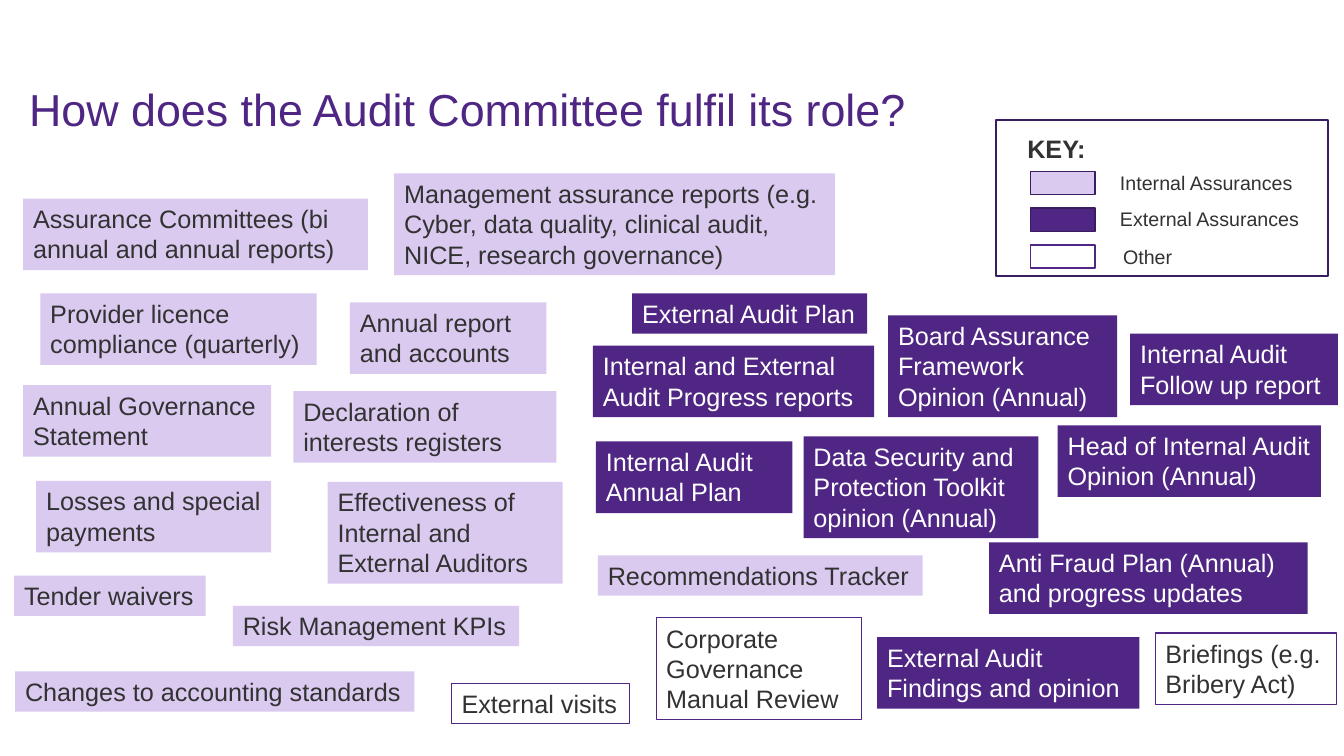
"""Build the slide on how the Audit Committee fulfils its role."""
from dataclasses import dataclass

from pptx import Presentation
from pptx.dml.color import RGBColor as Rgb
from pptx.enum.shapes import MSO_SHAPE as Form
from pptx.enum.text import MSO_ANCHOR as Anchor, MSO_AUTO_SIZE as Fit, PP_ALIGN as Align
from pptx.util import Inches, Pt


@dataclass(frozen=True)
class Theme:
    font: str = "Arial"
    plum: str = "4F2683"
    lilac: str = "DBCAF0"
    edge: str = "3A1C61"
    ink: str = "323232"
    white: str = "FFFFFF"
    title: int = 32
    body: int = 18
    small: int = 14


THEME = Theme()

STYLES = {
    "inner": dict(fill=THEME.lilac, ink=THEME.ink),
    "outer": dict(fill=THEME.plum, ink=THEME.white),
    "other": dict(fill=THEME.white, ink=THEME.ink, line=THEME.plum),
}

BOXES = {
    "inner": [
        (0.23, 1.97, 3.42, 2, "Assurance Committees (bi annual and annual reports)"),
        (3.91, 1.72, 4.37, 3, "Management assurance reports (e.g. Cyber, data quality, "
                              "clinical audit, NICE, research governance)"),
        (0.4, 2.91, 2.74, 2, "Provider licence compliance (quarterly)"),
        (3.47, 3, 1.95, 2, "Annual report and accounts"),
        (0.23, 3.82, 2.46, 2, "Annual Governance Statement"),
        (2.91, 3.88, 2.61, 2, "Declaration of interests registers"),
        (0.36, 4.77, 2.33, 2, "Losses and special payments"),
        (3.25, 4.78, 2.33, 3, "Effectiveness of Internal and External Auditors"),
        (5.93, 5.51, 3.22, 1, "Recommendations Tracker"),
        (0.14, 5.71, 1.9, 1, "Tender waivers"),
        (2.31, 6.01, 2.84, 1, "Risk Management KPIs"),
        (0.15, 6.66, 3.96, 1, "Changes to accounting standards"),
    ],
    "outer": [
        (6.27, 2.91, 2.33, 1, "External Audit Plan"),
        (5.88, 3.43, 2.79, 2, "Internal and External Audit Progress reports"),
        (8.81, 3.13, 2.27, 3, "Board Assurance Framework Opinion (Annual)"),
        (11.21, 3.31, 2.06, 2, "Internal Audit Follow up report"),
        (5.91, 4.38, 1.95, 2, "Internal Audit Annual Plan"),
        (7.97, 4.33, 2.33, 3, "Data Security and Protection Toolkit opinion (Annual)"),
        (10.49, 4.22, 2.61, 2, "Head of Internal Audit Opinion (Annual)"),
        (9.81, 5.38, 3.16, 2, "Anti Fraud Plan (Annual) and progress updates"),
        (8.7, 6.32, 2.6, 2, "External Audit Findings and opinion"),
    ],
    "other": [
        (4.48, 6.78, 1.76, 1, "External visits"),
        (6.51, 6.13, 2.04, 3, "Corporate Governance Manual Review"),
        (11.46, 6.28, 1.8, 2, "Briefings (e.g. Bribery Act)"),
    ],
}

KEYS = [
    (THEME.lilac, THEME.edge, 11.01, 1.65, "Internal Assurances"),
    (THEME.plum, THEME.edge, 11.01, 2, "External Assurances"),
    (THEME.white, THEME.plum, 11.04, 2.38, "Other"),
]


def write(shape, text, size=THEME.body, ink=THEME.ink, bold=False, wrap=True,
          fit=Fit.SHAPE_TO_FIT_TEXT, anchor=Anchor.TOP, space=1.0):
    """Put one formatted paragraph into a shape."""
    frame = shape.text_frame
    frame.word_wrap = wrap
    frame.auto_size = fit
    frame.vertical_anchor = anchor
    para = frame.paragraphs[0]
    para.alignment = Align.LEFT
    para.line_spacing = space
    run = para.add_run()
    run.text = text
    run.font.name = THEME.font
    run.font.size = Pt(size)
    run.font.bold = bold
    run.font.color.rgb = Rgb.from_string(ink)


class Board:
    """Hold the theme and the slide that is being drawn."""

    def __init__(self, slide, theme):
        """Keep the slide's shapes and the theme."""
        self.shapes = slide.shapes
        self.theme = theme

    def rect(self, at, fill=None, line=None, weight=1, shapes=None):
        """Draw a plain rectangle."""
        shape = (shapes or self.shapes).add_shape(Form.RECTANGLE, *map(Inches, at))
        shape.shadow.inherit = False
        if fill:
            shape.fill.solid()
            shape.fill.fore_color.rgb = Rgb.from_string(fill)
        else:
            shape.fill.background()
        if line:
            shape.line.color.rgb = Rgb.from_string(line)
            shape.line.width = Pt(weight)
        else:
            shape.line.fill.background()
        return shape

    def label(self, at, text, shapes=None, **form):
        """Draw a text box."""
        write((shapes or self.shapes).add_textbox(*map(Inches, at)), text, **form)

    def title(self, text):
        """Draw the slide title."""
        self.label((0.19, 0.75, 12.53, 0.65), text, size=self.theme.title,
                   ink=self.theme.plum, fit=Fit.NONE, anchor=Anchor.BOTTOM, space=0.9)

    def box(self, left, top, width, rows, text, fill, ink, line=None):
        """Draw one source of assurance, as tall as its rows of text."""
        high = round(0.1 + 0.303 * rows, 2)
        shape = self.rect((left, top, width, high), fill, line, weight=0.75)
        write(shape, text, ink=ink, wrap=rows > 1)

    def legend(self, keys):
        """Draw the framed key to the colours."""
        group = self.shapes.add_group_shape().shapes
        self.rect((9.88, 1.19, 3.29, 1.55), line=self.theme.edge, shapes=group)
        self.label((10.09, 1.27, 0.79, 0.38), "KEY:", group, bold=True, wrap=False)
        for row, (fill, line, left, top, text) in enumerate(keys):
            swatch = (10.22, 1.7 + 0.365 * row, 0.64, 0.23)
            self.rect(swatch, fill, line, shapes=group)
            self.label((left, top, 2.09, 0.32), text, group, size=self.theme.small)


def main():
    """Build and save the slide."""
    deck = Presentation()
    deck.slide_width, deck.slide_height = Inches(13.33), Inches(7.5)
    board = Board(deck.slides.add_slide(deck.slide_layouts[6]), THEME)
    board.title("How does the Audit Committee fulfil its role?")
    for kind, boxes in BOXES.items():
        for box in boxes:
            board.box(*box, **STYLES[kind])
    board.legend(KEYS)
    deck.save("out.pptx")


if __name__ == "__main__":
    main()
